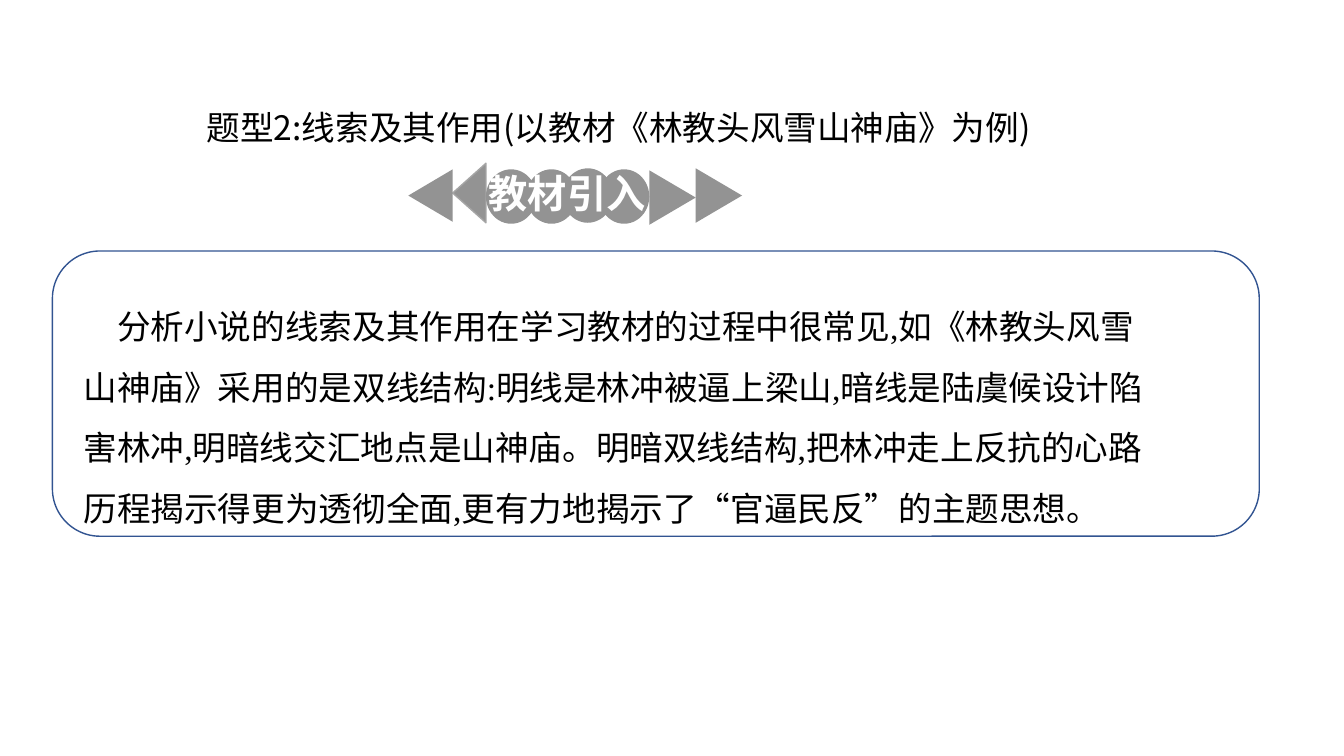
from dataclasses import dataclass

from lxml import etree
from pptx import Presentation
from pptx.dml.color import RGBColor
from pptx.enum.shapes import MSO_SHAPE
from pptx.enum.text import MSO_ANCHOR, PP_ALIGN
from pptx.oxml.ns import qn
from pptx.util import Emu, Pt

EMU_PER_PX = 9144  # 100 px to the inch
TRIANGLE = MSO_SHAPE.FLOWCHART_EXTRACT
CIRCLE = MSO_SHAPE.OVAL
ROUNDED = MSO_SHAPE.ROUNDED_RECTANGLE
LEFT = PP_ALIGN.LEFT
TOP = MSO_ANCHOR.TOP


@dataclass(frozen=True)
class Theme:
    ink: RGBColor = RGBColor(0x00, 0x00, 0x00)
    white: RGBColor = RGBColor(0xFF, 0xFF, 0xFF)
    badge: RGBColor = RGBColor(0x93, 0x93, 0x93)
    badge_edge: RGBColor = RGBColor(0xA5, 0xA5, 0xA5)
    frame: RGBColor = RGBColor(0x32, 0x54, 0x91)
    sans: str = "Noto Sans CJK SC"
    serif: str = "Times New Roman"
    text_size: int = 24
    badge_size: int = 28


@dataclass(frozen=True)
class Box:
    left: int
    top: int
    width: int
    height: int

    def emu(self) -> list[Emu]:
        return [Emu(v * EMU_PER_PX)
                for v in (self.left, self.top, self.width, self.height)]


@dataclass(frozen=True)
class Ornament:
    kind: MSO_SHAPE
    box: Box
    rotation: int = 0
    edge: RGBColor | None = None


THEME = Theme()

ORNAMENTS = [
    Ornament(TRIANGLE, Box(436, 175, 59, 33), 270, THEME.badge_edge),
    Ornament(CIRCLE, Box(482, 168, 50, 54)),
    Ornament(CIRCLE, Box(522, 168, 50, 54)),
    Ornament(CIRCLE, Box(558, 167, 50, 54)),
    Ornament(CIRCLE, Box(594, 168, 50, 54)),
    Ornament(TRIANGLE, Box(401, 172, 52, 44), 270),
    Ornament(TRIANGLE, Box(640, 173, 54, 46), 90),
    Ornament(TRIANGLE, Box(686, 171, 54, 46), 90),
]

TITLE = "题型2:线索及其作用(以教材《林教头风雪山神庙》为例)"
BADGE = "教材引入"
PASSAGE = (
    "\u3000分析小说的线索及其作用在学习教材的过程中很常见,如《林教头风雪山神庙》"
    "采用的是双线结构:明线是林冲被逼上梁山,暗线是陆虞候设计陷害林冲,"
    "明暗线交汇地点是山神庙。明暗双线结构,把林冲走上反抗的心路历程揭示得更为透彻全面,"
    "更有力地揭示了“官逼民反”的主题思想。"
).replace("\u3000", "　")


def add_outline(slide, kind: MSO_SHAPE, box: Box, fill: RGBColor | None,
                edge: RGBColor | None, rotation: int = 0) -> None:
    shape = slide.shapes.add_shape(kind, *box.emu())
    shape.shadow.inherit = False
    shape.rotation = rotation
    if fill is None:
        shape.fill.background()
    else:
        shape.fill.solid()
        shape.fill.fore_color.rgb = fill
    if edge is None:
        shape.line.fill.background()
    else:
        shape.line.color.rgb = edge
        shape.line.width = Pt(1)


def write_text(shape, text: str, font_name: str, size: int, color: RGBColor,
               bold: bool = False, spacing: float = 1.0) -> None:
    frame = shape.text_frame
    frame.word_wrap = True
    frame.vertical_anchor = TOP
    frame.text = text
    paragraph = frame.paragraphs[0]
    paragraph.alignment = LEFT
    paragraph.line_spacing = spacing
    font = paragraph.font
    font.name = font_name
    font.size = Pt(size)
    font.bold = bold
    font.color.rgb = color
    # Chinese glyphs use the sans face
    defaults = paragraph._p.pPr.find(qn("a:defRPr"))
    east_asian = etree.Element(qn("a:ea"), typeface=THEME.sans)
    defaults.find(qn("a:latin")).addnext(east_asian)


def main() -> None:
    deck = Presentation()
    deck.slide_width = Emu(1333 * EMU_PER_PX)
    deck.slide_height = Emu(750 * EMU_PER_PX)
    slide = deck.slides.add_slide(deck.slide_layouts[5])

    # Heading
    heading = slide.shapes.title
    heading.left, heading.top, heading.width, heading.height = Box(195, 101, 858, 50).emu()
    write_text(heading, TITLE, THEME.sans, THEME.text_size, THEME.ink)

    # Badge with circles and arrowheads
    for item in ORNAMENTS:
        add_outline(slide, item.kind, item.box, THEME.badge, item.edge, item.rotation)
    badge = slide.shapes.add_textbox(*Box(475, 163, 180, 57).emu())
    write_text(badge, BADGE, THEME.sans, THEME.badge_size, THEME.white, bold=True)

    # Framed passage
    add_outline(slide, ROUNDED, Box(52, 249, 1197, 283), None, THEME.frame)
    passage = slide.shapes.add_textbox(*Box(73, 279, 1092, 207).emu())
    write_text(passage, PASSAGE, THEME.serif, THEME.text_size, THEME.ink, spacing=1.5)

    deck.save("out.pptx")


if __name__ == "__main__":
    main()
